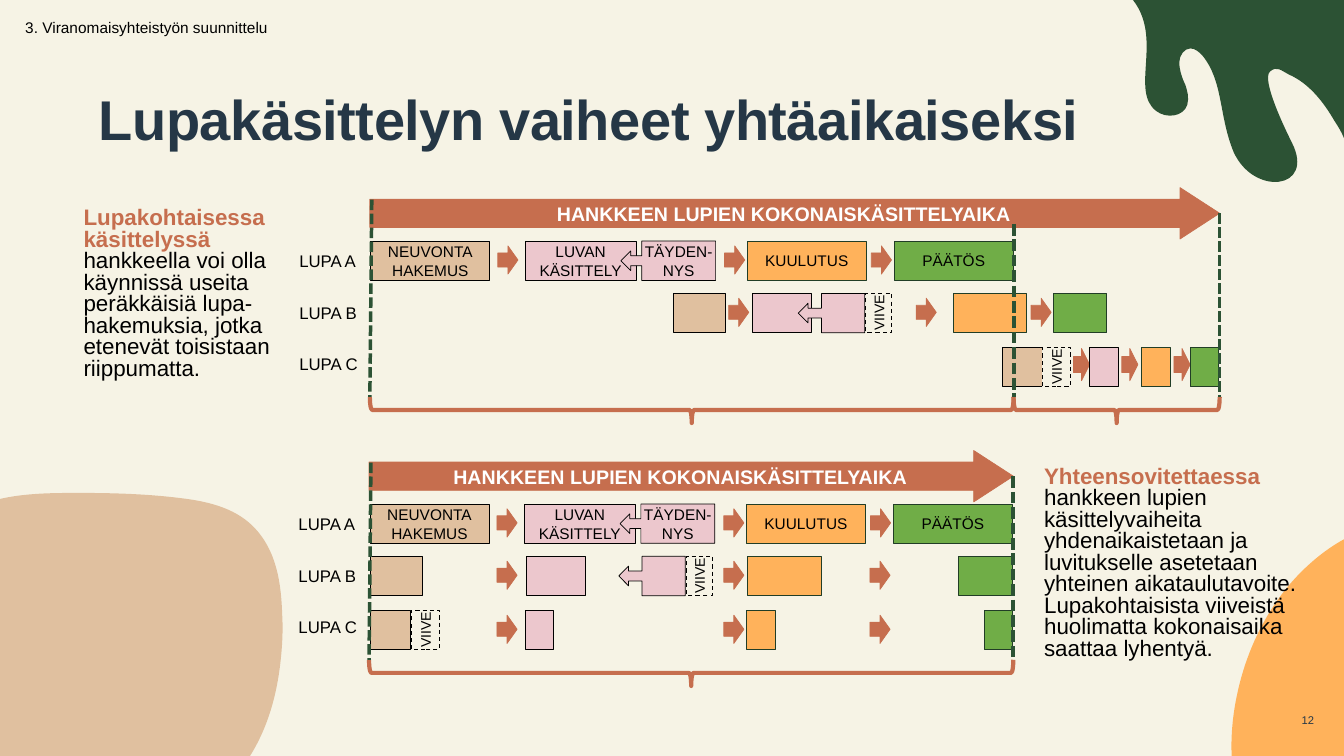
from pptx import Presentation
from pptx.dml.color import RGBColor
from pptx.enum.dml import MSO_LINE
from pptx.enum.shapes import MSO_CONNECTOR, MSO_SHAPE as SHAPE
from pptx.enum.text import MSO_ANCHOR as ANCHOR, PP_ALIGN as ALIGN
from pptx.oxml.ns import qn
from pptx.util import Pt
from lxml.etree import SubElement

COLORS = {
    "paper": "F6F3E5", "ink": "000000", "navy": "253746", "white": "FFFFFF",
    "rust": "C66E4E", "forest": "2C5234", "edge": "213D26",
    "sand": "E0C09F", "pink": "ECC7CD", "amber": "FFB25B", "green": "70AD47",
}

# Stage: fill, outline, lines of text in the labelled row
STAGES = {
    "application": ("sand", "ink", ["NEUVONTA", "HAKEMUS"]),
    "handling": ("pink", "ink", ["LUVAN", "KÄSITTELY"]),
    "supplement": ("pink", "ink", ["TÄYDEN-NYS"]),
    "delay": ("paper", "ink", ["VIIVE"]),
    "notice": ("amber", "edge", ["KUULUTUS"]),
    "decision": ("green", "edge", ["PÄÄTÖS"]),
}
# Arrow: width, height, distance below the top of the row
ARROWS = {"arrow": (14.4, 20.2, 3.4), "tight": (11.5, 23, 0.7)}

ROW_TOPS = {"A": 38.2, "B": 75.6, "C": 114.2}
ROW_HEIGHT = 28.1
WIDTHS = {
    "A": dict(application=85, handling=79.2, supplement=67.7, notice=85, decision=85),
    "B": dict(application=37.4, handling=42.5, supplement=47.5, delay=18.7,
              notice=52.6, decision=38.2),
    "C": dict(application=28.8, handling=20.2, delay=20.2, notice=20.2, decision=20.2),
}

ROW_A = [("application", 0.7), ("arrow", 91.4), ("handling", 111), ("supplement", 179.3),
         ("arrow", 253.4), ("notice", 269.6), ("arrow", 358.2), ("decision", 374.6)]
SEPARATE = {
    "A": ROW_A,
    "B": [("application", 216.7), ("arrow", 256.3), ("handling", 273), ("supplement", 306),
          ("delay", 354.2), ("arrow", 390.2), ("notice", 416.7), ("arrow", 472.3),
          ("decision", 488.2)],
    "C": [("application", 451.6), ("delay", 480.2), ("tight", 502.6), ("handling", 514.1),
          ("tight", 537.1), ("notice", 551.3), ("tight", 574.4), ("decision", 586.1)],
}
ALIGNED = {
    "A": ROW_A,
    "B": [("application", 1), ("arrow", 91.4), ("handling", 112.3), ("supplement", 178.4),
          ("delay", 226.6), ("arrow", 253.4), ("notice", 270.2), ("arrow", 357.8),
          ("decision", 421.2)],
    "C": [("application", 1), ("delay", 30), ("arrow", 91.4), ("handling", 111.6),
          ("arrow", 253.4), ("notice", 269.8), ("arrow", 357.8), ("decision", 439.6)],
}

# Blobs: start, three points per curve, closing corner
AMBER_BLOB = [(80.9, 0), (67.7, 7.2), (54.7, 18), (43.9, 30.2), (23, 54), (10.1, 83.5),
              (4.3, 112.3), (1.4, 126), (0, 141.1), (0.7, 154.8), (80.9, 154.8)]
SAND_BLOB = [(178.6, 187.9), (190.8, 168.5), (197.3, 146.2), (200.2, 122.4), (201.6, 110.2),
             (202.3, 98.6), (201.6, 87.1), (200.9, 65.5), (198, 41), (180.7, 23.8),
             (167, 10.1), (146.9, 5.8), (128.2, 3.6), (104.4, 0.7), (80.6, 0), (56.9, 0),
             (38.9, 0), (18.7, 0), (0, 4.3), (0, 187.9)]
FOREST_BLOB = [(152.9, 98.6), (151.2, 94.3), (149, 90.7), (146.2, 86.4), (138.2, 72.7),
               (128.2, 59.8), (113.8, 53.3), (108, 50.4), (105.1, 46.8), (100.1, 51.1),
               (93.6, 56.9), (111.6, 93.6), (115.9, 102.2), (132.5, 135.4), (88.6, 140.4),
               (74.2, 108.7), (63.4, 82.8), (67, 58.3), (51.8, 39.6), (49.7, 37.4),
               (46.8, 34.6), (43.2, 34.6), (38.9, 34.6), (35.3, 39.6), (35.3, 44.6),
               (35.3, 49.7), (37.4, 56.2), (39.6, 60.5), (41, 64.8), (42.5, 69.8),
               (41, 74.9), (38.2, 83.5), (25.9, 84.9), (18.7, 79.2), (0, 64.8),
               (23.8, 27.4), (2.2, 0), (152.9, 0)]


def rgb(name):
    return RGBColor.from_string(COLORS[name])


def add_run(paragraph, text, size, color="ink", bold=False):
    run = paragraph.add_run()
    run.text = text
    font = run.font
    font.name, font.size, font.bold = "Arial", Pt(size), bold
    font.color.rgb = rgb(color)
    return run


def clear_margins(frame):
    frame.margin_left = frame.margin_right = frame.margin_top = frame.margin_bottom = 0


def add_text(slide, box, text, size, color="ink"):
    frame = slide.shapes.add_textbox(*map(Pt, box)).text_frame
    frame.word_wrap = True
    clear_margins(frame)
    add_run(frame.paragraphs[0], text, size, color)
    return frame


def style(shape, fill, line, width=0.5):
    shape.shadow.inherit = False
    if fill:
        shape.fill.solid()
        shape.fill.fore_color.rgb = rgb(fill)
    else:
        shape.fill.background()
    shape.line.color.rgb = rgb(line)
    shape.line.width = Pt(width)


def add_block(slide, kind, box, fill, line, lines=(), size=11, color="ink", bold=False):
    block = slide.shapes.add_shape(kind, *map(Pt, box))
    style(block, fill, line)
    frame = block.text_frame
    frame.word_wrap, frame.vertical_anchor = True, ANCHOR.MIDDLE
    clear_margins(frame)
    for i, text in enumerate(lines):
        paragraph = frame.add_paragraph() if i else frame.paragraphs[0]
        paragraph.alignment = ALIGN.CENTER
        add_run(paragraph, text, size, color, bold)
    return block


def add_blob(slide, left, top, points, color):
    anchors = points[:-1:3] + points[-1:]
    corners = [(Pt(left + x), Pt(top + y)) for x, y in anchors]
    builder = slide.shapes.build_freeform(*corners[0], scale=1.0)
    builder.add_line_segments(corners[1:], close=True)
    blob = builder.convert_to_shape()
    style(blob, color, color)
    blob.line.fill.background()
    # Bend every side but the last two into a curve
    min_x, min_y = (min(axis) for axis in zip(*anchors))
    sides = list(blob._element.iter(qn("a:lnTo")))
    for i, side in enumerate(sides[:len(anchors) - 2]):
        side.tag = qn("a:cubicBezTo")
        side.remove(side[0])
        for x, y in points[3 * i + 1:3 * i + 4]:
            SubElement(side, qn("a:pt"), x=str(Pt(x - min_x)), y=str(Pt(y - min_y)))


def add_brace(slide, left, top, width):
    depth = 18.7
    brace = slide.shapes.add_shape(
        SHAPE.RIGHT_BRACE, Pt(left + (width - depth) / 2), Pt(top + (depth - width) / 2),
        Pt(depth), Pt(width))
    brace.rotation = 90
    style(brace, None, "rust", 3)


def add_marker(slide, start, end, width=2.5):
    marker = slide.shapes.add_connector(MSO_CONNECTOR.STRAIGHT, *map(Pt, start + end))
    marker.line.color.rgb = rgb("forest")
    marker.line.width = Pt(width)
    marker.line.dash_style = MSO_LINE.SQUARE_DOT
    SubElement(marker._element.spPr, qn("a:effectLst"))


def add_stage(slide, stage, row, left, top):
    if stage in ARROWS:
        width, height, drop = ARROWS[stage]
        add_block(slide, SHAPE.RIGHT_ARROW, (left, top + drop, width, height), "rust", "rust")
        return
    fill, line, lines = STAGES[stage]
    delay = stage == "delay"
    kind = SHAPE.LEFT_ARROW_CALLOUT if stage == "supplement" else SHAPE.RECTANGLE
    block = add_block(slide, kind, (left, top, WIDTHS[row][stage], ROW_HEIGHT), fill, line,
                      lines if delay or row == "A" else (), 10 if delay else 11)
    if delay:
        block.line.width, block.line.dash_style = Pt(0.75), MSO_LINE.DASH
        block._element.txBody.bodyPr.set("vert", "vert270")
    elif stage == "supplement" and row == "A":
        block.adjustments[3] = 0.78


def add_timeline(slide, left, top, width, rows, deadline):
    for i, (row, stages) in enumerate(rows.items()):
        add_text(slide, (left - 50.4, top + 41.8 + 36.7 * i, 49, 21.6),
                 f"LUPA {row}", 12).margin_top = Pt(3.6)
        for stage, x in stages:
            add_stage(slide, stage, row, left + x, top + ROW_TOPS[row])
    # Total duration
    total = add_block(slide, SHAPE.RIGHT_ARROW, (left, top, width, 36.7), "rust", "rust",
                      ["HANKKEEN LUPIEN KOKONAISKÄSITTELYAIKA"], 14, "white", True)
    total.adjustments[0], total.adjustments[1] = 0.55, 0.77
    # Braces and time limits
    foot = top + 149.5
    edges = sorted({0, deadline, width})
    for begin, end in zip(edges, edges[1:]):
        add_brace(slide, left + begin, foot, end - begin)
    add_marker(slide, (left + 1.4, top + 8.6), (left, foot))
    for edge in edges[1:]:
        add_marker(slide, (left + edge, top + (18.5 if edge == width else 26)),
                   (left + edge, foot), 2.75 if edge == deadline else 2.5)


def add_side_note(slide, box, heading, body):
    frame = slide.shapes.add_textbox(*map(Pt, box)).text_frame
    frame.word_wrap = True
    first, second = frame.paragraphs[0], frame.add_paragraph()
    first.line_spacing = second.line_spacing = 0.8
    add_run(first, heading[0], 16, "rust", True)
    for text in heading[1:]:
        add_run(second, text, 16, "rust", True)
        second.add_line_break()
    add_run(second, body, 16)


def add_headings(slide):
    title = slide.shapes.title
    title.left, title.top, title.width, title.height = map(Pt, (70.6, 65.5, 819.4, 94.3))
    frame = title.text_frame
    frame.word_wrap, frame.vertical_anchor = True, ANCHOR.TOP
    clear_margins(frame)
    heading = frame.paragraphs[0]
    heading.alignment, heading.line_spacing = ALIGN.LEFT, 0.9
    run = add_run(heading, "Lupakäsittelyn vaiheet yhtäaikaiseksi", 40, "navy", True)
    run.font._element.set("spc", "-30")
    section = add_text(slide, (18, 16.6, 178.6, 18.7), "3. Viranomaisyhteistyön suunnittelu", 11)
    section.paragraphs[0].line_spacing = Pt(9.8)
    number = add_text(slide, (917.3, 506.2, 33.8, 15.8), "12", 8, "navy")
    number.vertical_anchor = ANCHOR.MIDDLE
    number.paragraphs[0].alignment = ALIGN.CENTER


def main():
    prs = Presentation()
    prs.slide_width, prs.slide_height = Pt(960), Pt(540)
    slide = prs.slides.add_slide(prs.slide_layouts[5])
    slide.background.fill.solid()
    slide.background.fill.fore_color.rgb = rgb("paper")
    add_blob(slide, 879.1, 385.2, AMBER_BLOB, "amber")
    add_blob(slide, 0, 352.1, SAND_BLOB, "sand")
    add_blob(slide, 807.1, 0, FOREST_BLOB, "forest")
    add_headings(slide)
    add_side_note(slide, (52.6, 145.4, 180.7, 131), ["Lupakohtaisessa", "käsittelyssä"],
                  "hankkeella voi olla käynnissä useita peräkkäisiä lupa-hakemuksia, "
                  "jotka etenevät toisistaan riippumatta.")
    add_side_note(slide, (738.7, 330.2, 195.8, 146.9), ["Yhteensovitettaessa"],
                  "hankkeen lupien käsittelyvaiheita yhdenaikaistetaan ja luvitukselle "
                  "asetetaan yhteinen aikataulutavoite. Lupakohtaisista viiveistä "
                  "huolimatta kokonaisaika saattaa lyhentyä.")
    add_timeline(slide, 264.2, 134, 607, SEPARATE, deadline=459.8)
    add_timeline(slide, 263.6, 321.8, 460.2, ALIGNED, deadline=460.2)
    prs.save("out.pptx")


if __name__ == "__main__":
    main()
